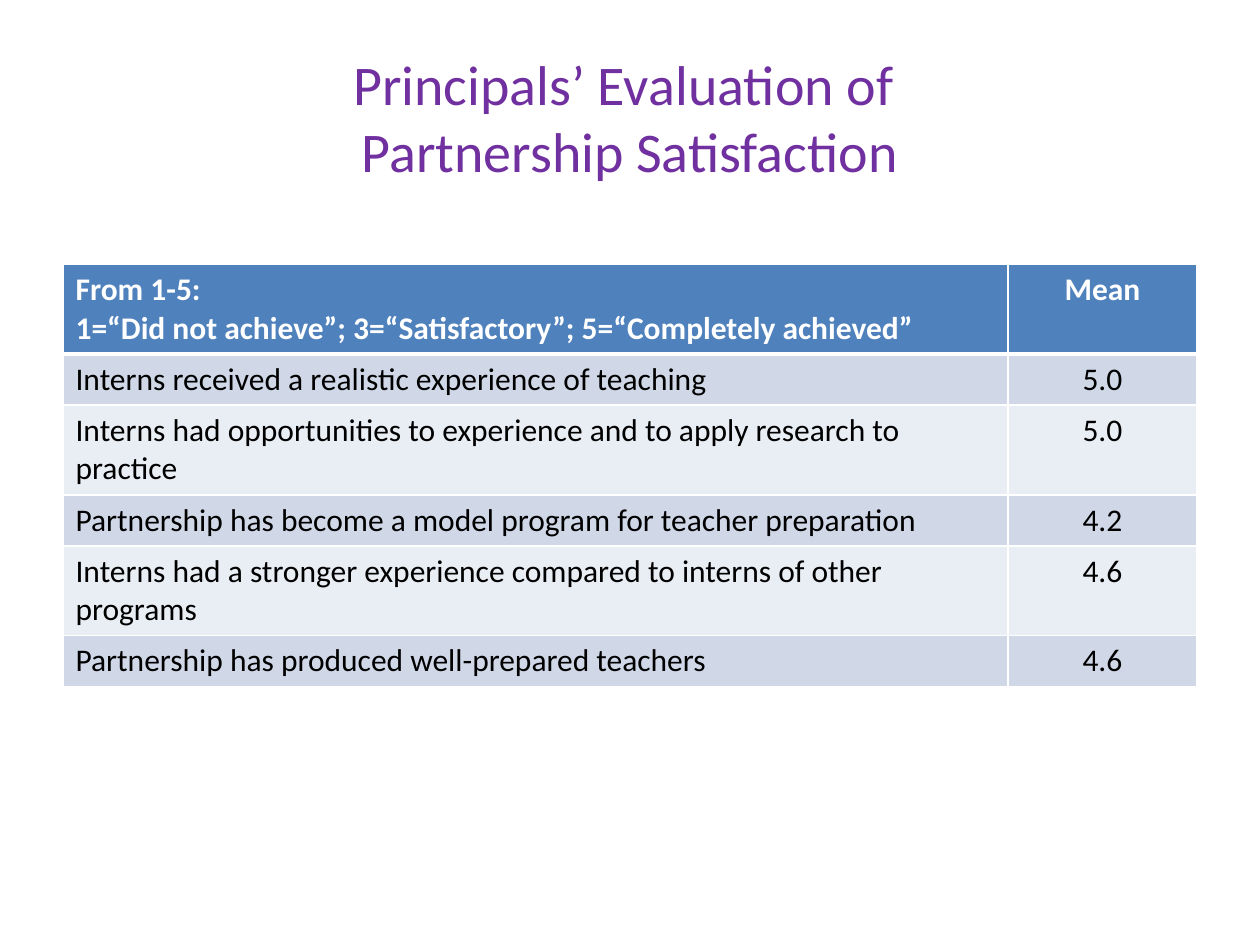
from lxml import etree
from pptx import Presentation
from pptx.dml.color import RGBColor
from pptx.enum import text
from pptx.oxml import ns
from pptx.util import Pt

PURPLE = RGBColor(0x70, 0x30, 0xA0)
BLUE = RGBColor(0x4F, 0x81, 0xBD)
BAND_DARK = RGBColor(0xD0, 0xD8, 0xE8)
BAND_LIGHT = RGBColor(0xE9, 0xED, 0xF4)
WHITE = RGBColor(0xFF, 0xFF, 0xFF)
BLACK = RGBColor(0, 0, 0)

HEADER = ("From 1-5:\n1=“Did not achieve”; 3=“Satisfactory”; 5=“Completely achieved”", "Mean")
RATINGS = [
    ("Interns received a realistic experience of teaching", "5.0"),
    ("Interns had opportunities to experience and to apply research to practice", "5.0"),
    ("Partnership has become a model program for teacher preparation", "4.2"),
    ("Interns had a stronger experience compared to interns of other programs", "4.6"),
    ("Partnership has produced well-prepared teachers", "4.6"),
]


class SlideBuilder:
    font = "Calibri"
    title_size = 32
    table_size = 18

    def __init__(self, slide):
        self.slide = slide

    def add_run(self, paragraph, wording, size, color, bold=False):
        run = paragraph.add_run()
        run.text = wording
        run.font.name = self.font
        run.font.size = Pt(size)
        run.font.bold = bold
        run.font.color.rgb = color

    def title(self, lines, left, top, width, height):
        heading = self.slide.shapes.title
        heading.left, heading.top = Pt(left), Pt(top)
        heading.width, heading.height = Pt(width), Pt(height)
        heading.text_frame.vertical_anchor = text.MSO_ANCHOR.MIDDLE
        paragraph = heading.text_frame.paragraphs[0]
        paragraph.alignment = text.PP_ALIGN.CENTER
        for index, line in enumerate(lines):
            if index:
                paragraph.add_line_break()
            self.add_run(paragraph, line, self.title_size, PURPLE)

    def border(self, cell, side, width):
        line = etree.SubElement(cell._tc.get_or_add_tcPr(), ns.qn(f"a:ln{side}"), w=str(Pt(width)))
        fill = etree.SubElement(line, ns.qn("a:solidFill"))
        etree.SubElement(fill, ns.qn("a:srgbClr"), val=str(WHITE))

    def cell(self, cell, wording, row, centred):
        is_header = row == 0
        for side in "LRTB":
            under_header = (row, side) in ((0, "B"), (1, "T"))
            self.border(cell, side, 3 if under_header else 1)
        cell.fill.solid()
        cell.fill.fore_color.rgb = BLUE if is_header else BAND_DARK if row % 2 else BAND_LIGHT
        for index, line in enumerate(wording.split("\n")):
            frame = cell.text_frame
            paragraph = frame.add_paragraph() if index else frame.paragraphs[0]
            paragraph.alignment = text.PP_ALIGN.CENTER if centred else text.PP_ALIGN.LEFT
            self.add_run(paragraph, line, self.table_size, WHITE if is_header else BLACK, is_header)

    def table(self, rows, left, top, column_widths, row_height, height):
        """Rows start at row_height and grow with their text to fill height."""
        frame = self.slide.shapes.add_table(
            len(rows), len(column_widths), Pt(left), Pt(top), Pt(sum(column_widths)), Pt(height))
        for column, width in zip(frame.table.columns, column_widths):
            column.width = Pt(width)
        for row, wordings in enumerate(rows):
            frame.table.rows[row].height = Pt(row_height)
            for column, wording in enumerate(wordings):
                self.cell(frame.table.cell(row, column), wording, row, centred=column > 0)
        frame.height = Pt(height)


def main():
    presentation = Presentation()
    presentation.slide_width, presentation.slide_height = Pt(720), Pt(540)
    title_only = presentation.slide_layouts[5]
    builder = SlideBuilder(presentation.slides.add_slide(title_only))
    builder.title(["Principals’ Evaluation of ", "Partnership Satisfaction"], 36, 21.6, 648, 90)
    builder.table([HEADER] + RATINGS, 36, 151.2, [540, 108], 29.2, 239)
    presentation.save("out.pptx")


if __name__ == "__main__":
    main()
